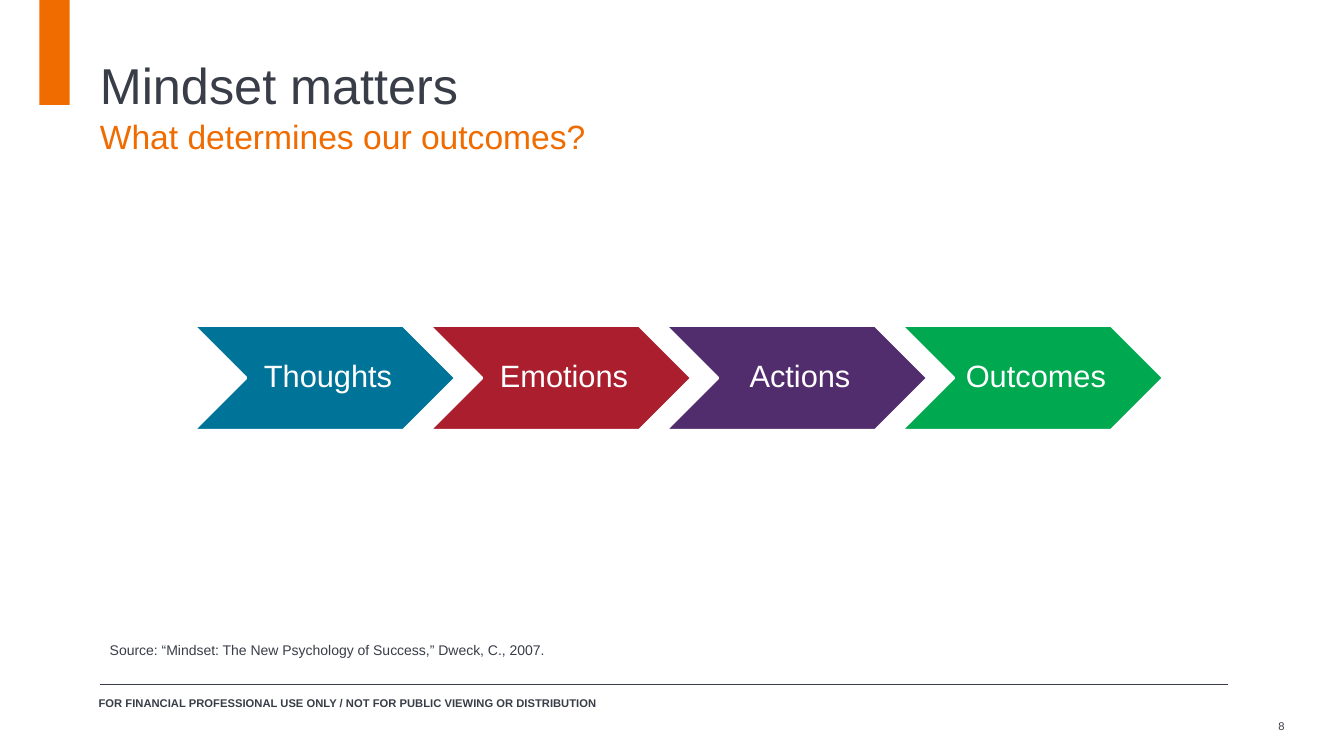
"""Build the "Mindset matters" slide with its four-step chevron chain."""
from pptx import Presentation, util as u
from pptx.dml.color import RGBColor
from pptx.enum import shapes, text

prs = Presentation()
prs.slide_width, prs.slide_height = u.Inches(13.33), u.Inches(7.5)
s = prs.slides.add_slide(prs.slide_layouts[6])

INK, ORANGE, WHITE = "393D47", "F06C00", "FFFFFF"
LEFT, WIDTH = 0.99, 11.19
TOP, MIDDLE, BOTTOM = text.MSO_ANCHOR.TOP, text.MSO_ANCHOR.MIDDLE, text.MSO_ANCHOR.BOTTOM
NONE, INSET = (0, 0, 0, 0), (0.1, 0.05, 0.1, 0.05)


def rgb(value):
    return RGBColor.from_string(value)


def write(sp, words, size, color, anchor, insets, para={}, bold=False):
    tf = sp.text_frame
    sides = ("margin_left", "margin_top", "margin_right", "margin_bottom")
    frame = dict(zip(sides, map(u.Inches, insets)), word_wrap=True, vertical_anchor=anchor)
    p = tf.paragraphs[0]
    r = p.add_run()
    r.text = words
    font = {"name": "Arial", "size": u.Pt(size), "bold": bold}
    for target, values in ((tf, frame), (p, para), (r.font, font)):
        for key, value in values.items():
            setattr(target, key, value)
    r.font.color.rgb = rgb(color)


sp = s.shapes.add_shape(shapes.MSO_SHAPE.RECTANGLE, *map(u.Inches, (0.39, 0, 0.3, 1.04)))
sp.shadow.inherit = False
sp.fill.solid()
sp.fill.fore_color.rgb = rgb(ORANGE)
sp.line.fill.background()

rule = s.shapes.add_connector(shapes.MSO_CONNECTOR.STRAIGHT,
                              *map(u.Inches, (LEFT, 6.79, LEFT + WIDTH, 6.79)))
rule.line.color.rgb = rgb(INK)
rule.line.width = u.Pt(0.5)
effects = rule._element.spPr.makeelement(
    "{http://schemas.openxmlformats.org/drawingml/2006/main}effectLst", {})
rule._element.spPr.append(effects)

spaced = {"space_after": u.Pt(6)}
right = {"alignment": text.PP_ALIGN.RIGHT}
boxes = [
    ((LEFT, 0.43, WIDTH, 0.71), "Mindset matters", 36, INK, BOTTOM, NONE),
    ((LEFT, 1.15, WIDTH, 0.39), "What determines our outcomes?", 24, ORANGE, TOP, NONE, spaced),
    ((0.88, 6.86, 11.47, 0.24),
     "FOR FINANCIAL PROFESSIONAL USE ONLY / NOT FOR PUBLIC VIEWING OR DISTRIBUTION",
     8, INK, TOP, INSET, {}, True),
    ((LEFT, 6.32, 11.5, 0.26),
     "Source: “Mindset: The New Psychology of Success,” Dweck, C., 2007.",
     10, INK, TOP, INSET, spaced),
    ((12.23, 7, 0.51, 0.4), "8", 8, INK, MIDDLE, NONE, right),
]
for place, *content in boxes:
    write(s.shapes.add_textbox(*map(u.Inches, place)), *content)

step_w, step_h = 2.6, 1.04
pitch = 0.9 * step_w
centred = {"alignment": text.PP_ALIGN.CENTER, "line_spacing": 0.9}
steps = {"Thoughts": "007398", "Emotions": "AA1E2E", "Actions": "522D6D", "Outcomes": "00A84F"}
for i, (label, color) in enumerate(steps.items()):
    sp = s.shapes.add_shape(shapes.MSO_SHAPE.CHEVRON,
                            *map(u.Inches, (1.92 + i * pitch, 3.23, step_w, step_h)))
    sp.shadow.inherit = False
    sp.fill.solid()
    sp.fill.fore_color.rgb = rgb(color)
    sp.line.color.rgb = rgb(WHITE)
    sp.line.width = u.Pt(2)
    write(sp, label, 22, WHITE, MIDDLE, (0.1, 0.03, 0.03, 0.03), centred)

prs.save("out.pptx")
